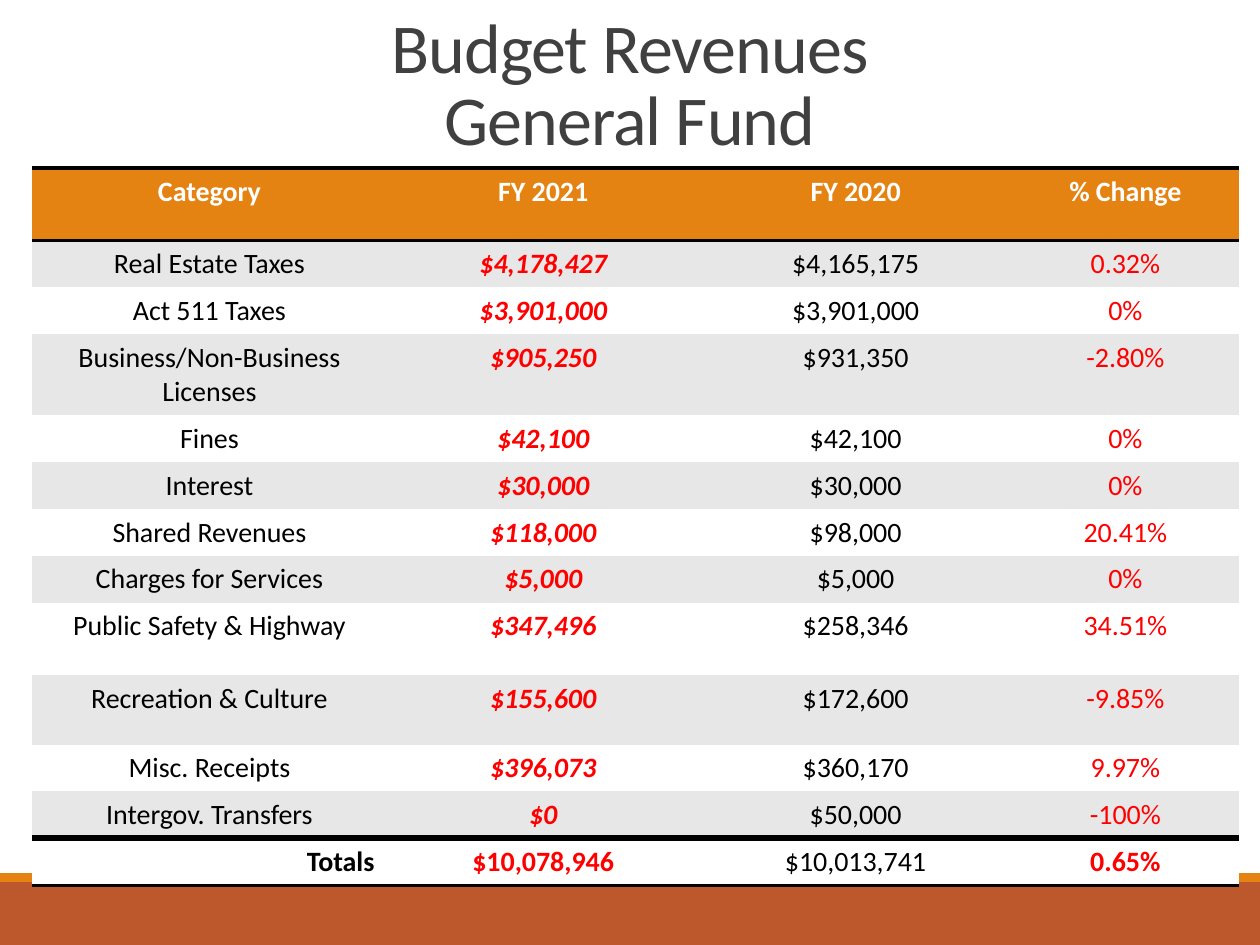
from copy import deepcopy

from lxml import etree
from pptx import Presentation
from pptx.dml.color import RGBColor
from pptx.enum.shapes import MSO_SHAPE
from pptx.enum.text import MSO_ANCHOR, MSO_AUTO_SIZE, PP_ALIGN
from pptx.oxml.ns import qn
from pptx.util import Pt

RECT = MSO_SHAPE.RECTANGLE
TOP = MSO_ANCHOR.TOP
NO_AUTOFIT = MSO_AUTO_SIZE.NONE
CENTER, RIGHT = PP_ALIGN.CENTER, PP_ALIGN.RIGHT

FONT = "Calibri"
PLAIN_STYLE = "{2D5ABB26-0587-4C30-8999-92F81FD0307C}"
COLORS = {
    "title": "404040",
    "rust": "BD582C",
    "orange": "E48312",
    "band": "E7E7E7",
    "white": "FFFFFF",
    "black": "000000",
    "red": "FF0000",
}
SLIDE_W, SLIDE_H = 720, 540

ROWS = [
    ("Category", "FY 2021", "FY 2020", "% Change"),
    ("Real Estate Taxes", "$4,178,427", "$4,165,175", "0.32%"),
    ("Act 511 Taxes", "$3,901,000", "$3,901,000", "0%"),
    ("Business/Non-Business Licenses", "$905,250", "$931,350", "-2.80%"),
    ("Fines", "$42,100", "$42,100", "0%"),
    ("Interest", "$30,000", "$30,000", "0%"),
    ("Shared Revenues", "$118,000", "$98,000", "20.41%"),
    ("Charges for Services", "$5,000", "$5,000", "0%"),
    ("Public Safety & Highway", "$347,496", "$258,346", "34.51%"),
    ("Recreation & Culture", "$155,600", "$172,600", "-9.85%"),
    ("Misc. Receipts", "$396,073", "$360,170", "9.97%"),
    ("Intergov. Transfers", "$0", "$50,000", "-100%"),
    ("Totals", "$10,078,946", "$10,013,741", "0.65%"),
]
LAST = len(ROWS) - 1
COL_WIDTHS = [203, 178.5, 178.5, 129.8]
ROW_HEIGHT = 25.2
TALL_ROWS = {0: 41.4, 3: 43.9, 8: 41.4, 9: 39.6}


def rgb(name):
    return RGBColor.from_string(COLORS[name])


def style_run(r, size, color, bold=False, italic=False):
    r.font.name = FONT
    r.font.size = Pt(size)
    r.font.color.rgb = rgb(color)
    r.font.bold = bold
    r.font.italic = italic


def add_footer_bands(slide, x, y, w, h, stripe_h):
    """Thin orange stripe on top of a rust band."""
    for color, top, height in (("rust", y + stripe_h, h - stripe_h),
                               ("orange", y, stripe_h)):
        sp = slide.shapes.add_shape(RECT, Pt(x), Pt(top), Pt(w), Pt(height))
        sp.shadow.inherit = False
        sp.fill.solid()
        sp.fill.fore_color.rgb = rgb(color)
        sp.line.fill.background()


def place_title(slide, x, y, w, h):
    title = slide.shapes.title
    title.left, title.top, title.width, title.height = Pt(x), Pt(y), Pt(w), Pt(h)
    tf = title.text_frame
    tf.text = "Budget Revenues\vGeneral Fund"
    tf.word_wrap = True
    tf.auto_size = NO_AUTOFIT
    tf.vertical_anchor = TOP
    p = tf.paragraphs[0]
    p.alignment = CENTER
    p.line_spacing = 0.85
    for r in p.runs:
        style_run(r, 40, "title")
        r.font._element.set("spc", "-50")
    for br in p._p.findall(qn("a:br")):
        br.append(deepcopy(p.runs[0].font._element))


def add_border(cell, side, width):
    ln = etree.SubElement(cell._tc.get_or_add_tcPr(), qn(f"a:ln{side}"),
                          w=str(Pt(width)))
    fill = etree.SubElement(ln, qn("a:solidFill"))
    etree.SubElement(fill, qn("a:srgbClr"), val=COLORS["black"])


def text_style(row, col):
    """Colour, bold and italic of a table cell's text."""
    if row == 0:
        return "white", True, False
    color = "red" if col in (1, 3) else "black"
    if row == LAST:
        return color, col != 2, False
    return color, col == 1, col == 1


def fill_cell(cell, text, row, col):
    if row in (0, LAST):
        add_border(cell, "T", 2 if row == 0 else 4)
        add_border(cell, "B", 2)
    cell.fill.solid()
    fill = "orange" if row == 0 else "band" if row % 2 else "white"
    cell.fill.fore_color.rgb = rgb(fill)
    cell.text = text
    p = cell.text_frame.paragraphs[0]
    p.alignment = RIGHT if (row, col) == (LAST, 0) else CENTER
    style_run(p.runs[0], 16, *text_style(row, col))


def add_revenue_table(slide, x, y):
    heights = [TALL_ROWS.get(i, ROW_HEIGHT) for i in range(len(ROWS))]
    frame = slide.shapes.add_table(len(ROWS), len(COL_WIDTHS), Pt(x), Pt(y),
                                   Pt(sum(COL_WIDTHS)), Pt(sum(heights)))
    table = frame.table
    table._tbl.tblPr.find(qn("a:tableStyleId")).text = PLAIN_STYLE
    for column, width in zip(table.columns, COL_WIDTHS):
        column.width = Pt(width)
    for i, (height, values) in enumerate(zip(heights, ROWS)):
        table.rows[i].height = Pt(height)
        for j, text in enumerate(values):
            fill_cell(table.cell(i, j), text, i, j)


def main():
    prs = Presentation()
    prs.slide_width, prs.slide_height = Pt(SLIDE_W), Pt(SLIDE_H)
    slide = prs.slides.add_slide(prs.slide_layouts[5])
    add_footer_bands(slide, 0, 499, SLIDE_W, SLIDE_H - 499, 5)
    place_title(slide, 24, 6, 672, 126.5)
    add_revenue_table(slide, 18.2, 96)
    prs.save("out.pptx")


if __name__ == "__main__":
    main()
